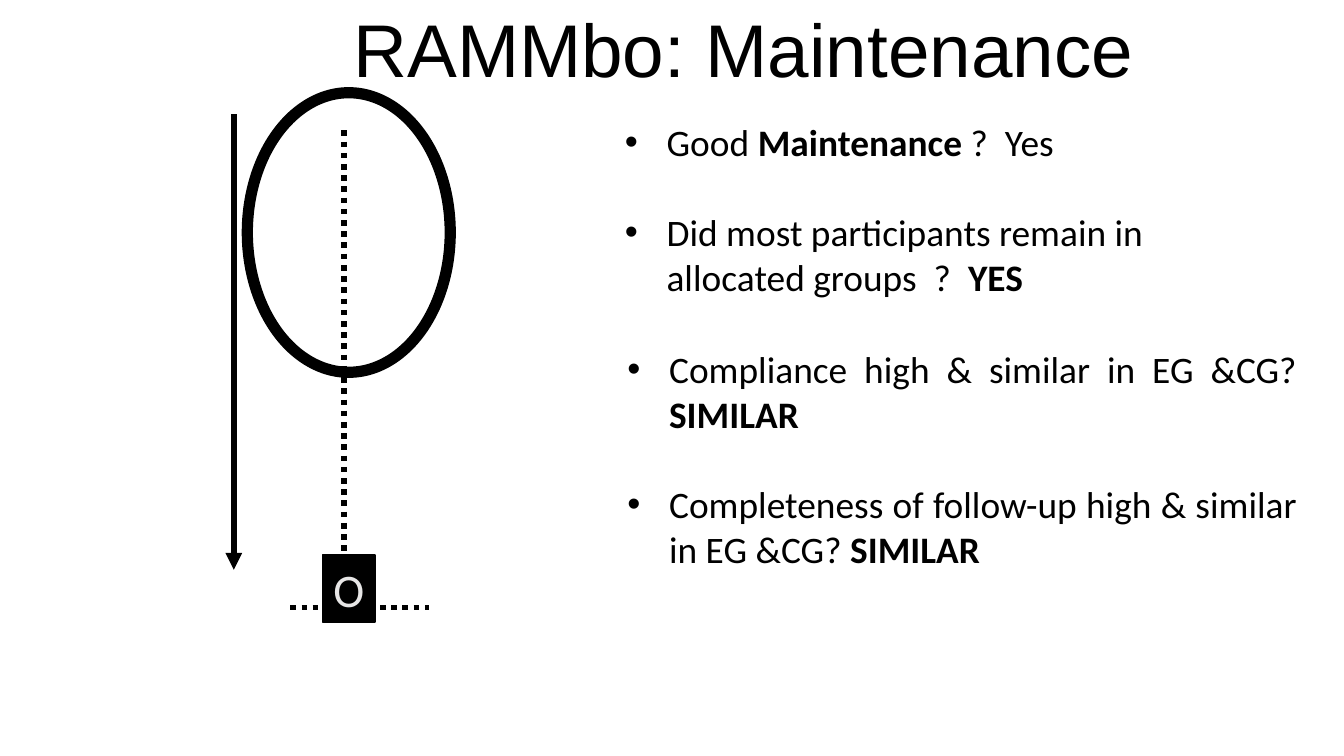
from lxml import etree
from pptx import Presentation
from pptx.dml.color import RGBColor
from pptx.enum.dml import MSO_LINE
from pptx.enum.shapes import MSO_CONNECTOR, MSO_SHAPE
from pptx.enum.text import MSO_ANCHOR, PP_ALIGN
from pptx.oxml.ns import qn
from pptx.util import Inches, Pt

BLACK = RGBColor(0, 0, 0)
WHITE = RGBColor(0xFF, 0xFF, 0xFF)
PALE = RGBColor(0xE7, 0xE6, 0xE6)
INDENT = Inches(0.31)
GAP = Pt(24)  # about one line of body text


def set_insets(frame, side, top):
    frame.margin_left = frame.margin_right = Inches(side)
    frame.margin_top = frame.margin_bottom = Inches(top)


def style_text(para, name, size, color):
    para.font.name = name
    para.font.size = Pt(size)
    para.font.color.rgb = color


def add_line(slide, x1, y1, x2, y2, dotted=False, arrow=False):
    line = slide.shapes.add_connector(
        MSO_CONNECTOR.STRAIGHT, Inches(x1), Inches(y1), Inches(x2), Inches(y2))
    line.line.color.rgb = BLACK
    line.line.width = Pt(3)
    if dotted:
        line.line.dash_style = MSO_LINE.ROUND_DOT
    props = line.line._get_or_add_ln()
    if arrow:
        etree.SubElement(props, qn("a:tailEnd"), type="triangle")
    etree.SubElement(line._element.spPr, qn("a:effectLst"))


def add_solid(slide, kind, left, top, width, height, weight):
    shape = slide.shapes.add_shape(
        kind, Inches(left), Inches(top), Inches(width), Inches(height))
    shape.shadow.inherit = False
    shape.line.color.rgb = BLACK
    shape.line.width = Pt(weight)
    return shape


def add_title(slide, left, top, width, height):
    box = slide.shapes.add_textbox(
        Inches(left), Inches(top), Inches(width), Inches(height))
    frame = box.text_frame
    frame.word_wrap = True
    frame.vertical_anchor = MSO_ANCHOR.TOP
    set_insets(frame, 0.1, 0.1)
    para = frame.paragraphs[0]
    para.text = "RAMMbo: Maintenance"
    para.alignment = PP_ALIGN.CENTER
    para.line_spacing = 0.9
    style_text(para, "Arial", 40, BLACK)


def add_diagram(slide, left, top):
    # Time arrow
    add_line(slide, left, top + 0.16, left, top + 3.55, arrow=True)
    # Study population
    oval = add_solid(slide, MSO_SHAPE.OVAL, left + 0.1, top, 1.51, 2.08, 6)
    oval.fill.background()
    # Dotted axes
    add_line(slide, left + 0.82, top + 0.28, left + 0.82, top + 3.63, dotted=True)
    add_line(slide, left + 0.42, top + 3.83, left + 1.45, top + 3.83, dotted=True)
    # Outcome box
    box = add_solid(
        slide, MSO_SHAPE.RECTANGLE, left + 0.66, top + 3.44, 0.39, 0.5, 0.75)
    box.fill.solid()
    box.fill.fore_color.rgb = BLACK
    frame = box.text_frame
    frame.word_wrap = False
    set_insets(frame, 0.08, 0.04)
    para = frame.paragraphs[0]
    para.text = "O"
    para.alignment = PP_ALIGN.CENTER
    style_text(para, "Calibri", 25, PALE)


def add_bullets(slide, left, top, width, height, items, align, side, inset):
    box = slide.shapes.add_textbox(
        Inches(left), Inches(top), Inches(width), Inches(height))
    frame = box.text_frame
    frame.word_wrap = True
    set_insets(frame, side, inset)
    for i, parts in enumerate(items):
        para = frame.paragraphs[0] if i == 0 else frame.add_paragraph()
        para.alignment = align
        if i:
            para.space_before = GAP
        style_text(para, "Calibri", 20, BLACK)
        props = para._p.get_or_add_pPr()
        props.set("marL", str(INDENT))
        props.set("indent", str(-INDENT))
        font = etree.Element(qn("a:buFont"), typeface="Arial")
        mark = etree.Element(qn("a:buChar"), char="•")
        props.find(qn("a:defRPr")).addprevious(font)
        font.addnext(mark)
        # Every second part is bold
        for n, words in enumerate(parts):
            run = para.add_run()
            run.text = words
            run.font.bold = n % 2 == 1


def main():
    deck = Presentation()
    deck.slide_width = Inches(10)
    deck.slide_height = deck.slide_width * 9 // 16
    slide = deck.slides.add_slide(deck.slide_layouts[6])
    slide.background.fill.solid()
    slide.background.fill.fore_color.rgb = WHITE

    add_title(slide, 1.78, 0, 7.5, 0.85)
    add_diagram(slide, 1.74, 0.69)
    add_bullets(slide, 4.57, 0.85, 4.78, 1.43, [
        ("Good ", "Maintenance ", "?  Yes"),
        ("Did most participants remain in allocated groups  ?  ", "YES"),
    ], PP_ALIGN.LEFT, 0.08, 0.04)
    add_bullets(slide, 4.57, 2.53, 5.18, 2.11, [
        ("Compliance high & similar in EG &CG? ", "SIMILAR"),
        ("Completeness of follow-up high & similar in EG &CG? ", "SIMILAR"),
    ], PP_ALIGN.JUSTIFY, 0.1, 0.05)
    deck.save("out.pptx")


if __name__ == "__main__":
    main()
